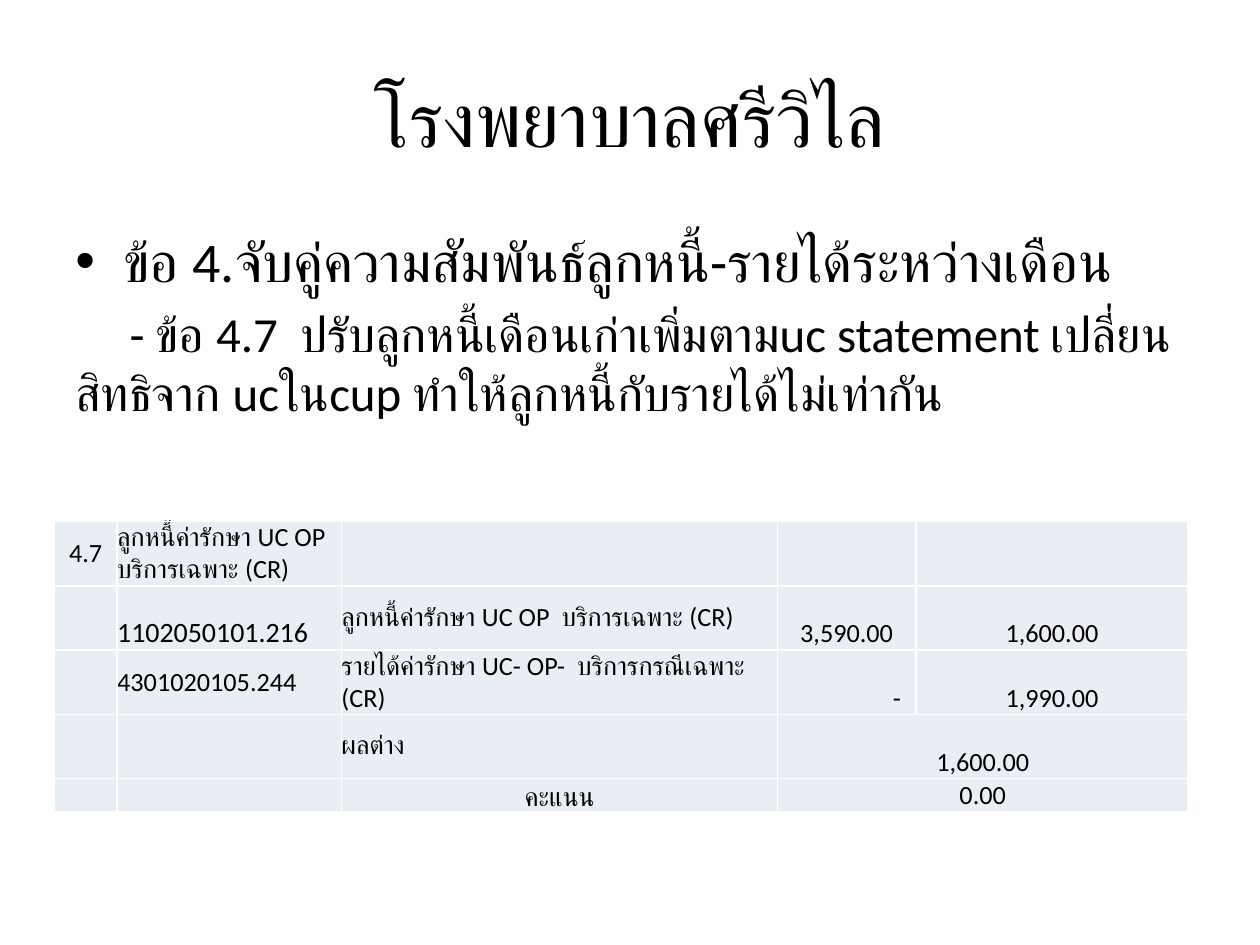
import pptx
import pptx.util
import pptx.oxml
import pptx.oxml.ns
import pptx.dml.color
import pptx.enum.text
from pptx.util import Inches

BLACK = pptx.dml.color.RGBColor(0x00, 0x00, 0x00)
PALE_BLUE = pptx.dml.color.RGBColor(0xE9, 0xED, 0xF4)
WHITE = pptx.dml.color.RGBColor(0xFF, 0xFF, 0xFF)
LEFT = pptx.enum.text.PP_ALIGN.LEFT
CENTER = pptx.enum.text.PP_ALIGN.CENTER
RIGHT = pptx.enum.text.PP_ALIGN.RIGHT
MIDDLE = pptx.enum.text.MSO_ANCHOR.MIDDLE
BOTTOM = pptx.enum.text.MSO_ANCHOR.BOTTOM
NAMESPACE = pptx.oxml.ns.nsdecls("a")


def format_paragraph(paragraph, text, size, alignment=LEFT):
    paragraph.text = text
    paragraph.alignment = alignment
    paragraph.font.name = "Calibri"
    paragraph.font.size = pptx.util.Pt(size)
    paragraph.font.color.rgb = BLACK


presentation = pptx.Presentation()
presentation.slide_width = Inches(10)
presentation.slide_height = Inches(7.5)
slide = presentation.slides.add_slide(presentation.slide_layouts[6])

title = slide.shapes.add_textbox(Inches(0.5), Inches(0.3), Inches(9), Inches(1.25)).text_frame
title.word_wrap = True
title.vertical_anchor = MIDDLE
format_paragraph(title.paragraphs[0], "โรงพยาบาลศรีวิไล", 44, CENTER)

body = slide.shapes.add_textbox(Inches(0.5), Inches(1.75), Inches(9), Inches(4.95)).text_frame
body.word_wrap = True
heading = body.paragraphs[0]
format_paragraph(heading, "ข้อ 4.จับคู่ความสัมพันธ์ลูกหนี้-รายได้ระหว่างเดือน", 32)
detail = body.add_paragraph()
format_paragraph(
    detail,
    "- ข้อ 4.7  ปรับลูกหนี้เดือนเก่าเพิ่มตามuc statement เปลี่ยนสิทธิจาก ucในcup ทำให้ลูกหนี้กับรายได้ไม่เท่ากัน",
    28,
)
heading.space_before = pptx.util.Pt(6.4)
detail.space_before = pptx.util.Pt(5.6)
heading_properties = heading._p.get_or_add_pPr()
heading_properties.set("marL", str(Inches(0.38)))
heading_properties.set("indent", str(Inches(-0.38)))
bullet_xml = (f'<a:buFont {NAMESPACE} typeface="Arial"/>', f'<a:buChar {NAMESPACE} char="•"/>')
default_font = heading_properties.find(pptx.oxml.ns.qn("a:defRPr"))
for xml in bullet_xml:
    default_font.addprevious(pptx.oxml.parse_xml(xml))
detail._p.get_or_add_pPr().set("indent", str(Inches(0.43)))

column_widths = [0.5, 1.78, 3.46, 1.1, 2.16]
row_heights = [0.51, 0.51, 0.51, 0.51, 0.26]
cell_contents = {
    (0, 0): ("4.7", 15, CENTER, MIDDLE),
    (0, 1): ("ลูกหนี้ค่ารักษา UC OP  บริการเฉพาะ (CR)", 15, LEFT, MIDDLE),
    (1, 1): ("1102050101.216", 16, LEFT, BOTTOM),
    (1, 2): ("ลูกหนี้ค่ารักษา UC OP  บริการเฉพาะ (CR)", 15, LEFT, MIDDLE),
    (1, 3): ("3,590.00", 15, CENTER, BOTTOM),
    (1, 4): ("1,600.00", 15, CENTER, BOTTOM),
    (2, 1): ("4301020105.244", 15, LEFT, MIDDLE),
    (2, 2): ("รายได้ค่ารักษา UC- OP-  บริการกรณีเฉพาะ (CR)", 15, LEFT, MIDDLE),
    (2, 3): ("-", 15, RIGHT, BOTTOM),
    (2, 4): ("1,990.00", 15, CENTER, BOTTOM),
    (3, 2): ("ผลต่าง", 15, LEFT, MIDDLE),
    (3, 3): ("1,600.00", 15, CENTER, BOTTOM),
    (4, 2): ("คะแนน", 15, CENTER, BOTTOM),
    (4, 3): ("0.00", 15, CENTER, BOTTOM),
}
table = slide.shapes.add_table(
    len(row_heights), len(column_widths),
    Inches(0.43), Inches(4.14), Inches(sum(column_widths)), Inches(sum(row_heights)),
).table
table.first_row = False
table.horz_banding = False
for column, width in zip(table.columns, column_widths):
    column.width = Inches(width)
for row, height in zip(table.rows, row_heights):
    row.height = Inches(height)

for row_index in range(len(row_heights)):
    for column_index in range(len(column_widths)):
        cell = table.cell(row_index, column_index)
        text, size, alignment, anchor = cell_contents.get(
            (row_index, column_index), ("", 15, LEFT, MIDDLE))
        format_paragraph(cell.text_frame.paragraphs[0], text, size, alignment)
        cell.vertical_anchor = anchor
        cell.margin_left = cell.margin_top = cell.margin_bottom = 0
        cell.margin_right = Inches(0.12) if alignment == RIGHT else 0
        cell.fill.solid()
        cell.fill.fore_color.rgb = PALE_BLUE
        cell_properties = cell._tc.get_or_add_tcPr()
        for position, side in enumerate(("lnL", "lnR", "lnT", "lnB")):
            cell_properties.insert(position, pptx.oxml.parse_xml(
                f'<a:{side} {NAMESPACE} w="{pptx.util.Pt(1)}"><a:solidFill>'
                f'<a:srgbClr val="{WHITE}"/></a:solidFill></a:{side}>'))

for row_index in (3, 4):
    table.cell(row_index, 3).merge(table.cell(row_index, 4))

presentation.save("out.pptx")
